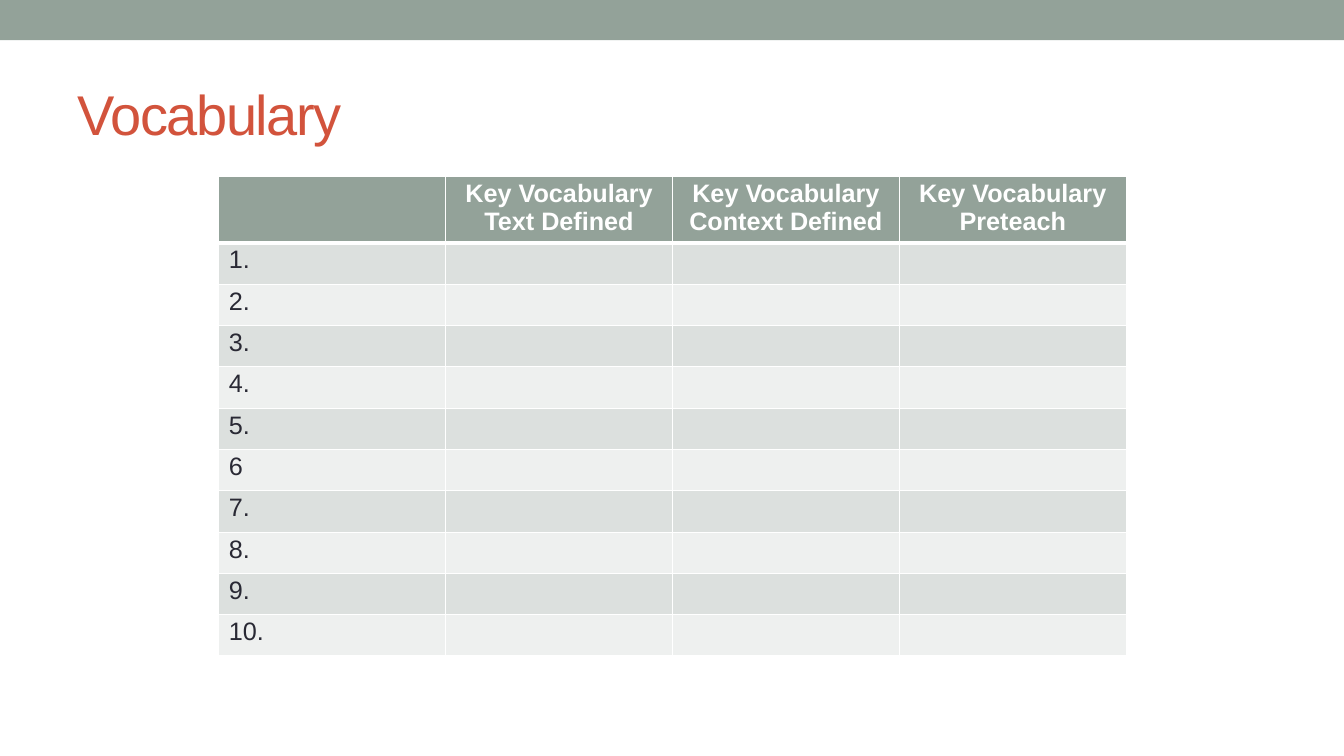
"""Builds a vocabulary slide with a blank word table."""
from lxml.etree import SubElement
from pptx import Presentation
from pptx.dml.color import RGBColor
from pptx.enum.shapes import MSO_SHAPE as SHAPE
from pptx.enum.text import MSO_ANCHOR as ANCHOR, PP_ALIGN as ALIGN
from pptx.oxml.ns import qn
from pptx.util import Inches, Pt


def rgb(value):
    return RGBColor.from_string(value)


def write(tf, text, size=18, color="292934", bold=False, align=ALIGN.LEFT, spacing=0):
    for i, line in enumerate(text.split("\n")):
        p = tf.paragraphs[0] if i == 0 else tf.add_paragraph()
        p.alignment = align
        r = p.add_run()
        r.text = line
        r.font.name = "Arial"
        r.font.size = Pt(size)
        r.font.bold = bold
        r.font.color.rgb = rgb(color)
        if spacing:
            r.font._element.set("spc", str(spacing * 100))


class Deck:
    sage, red, white = "93A299", "D2533C", "FFFFFF"
    bands = ("DCE0DE", "EEF0EF")

    def __init__(self):
        self.prs = Presentation()
        self.prs.slide_width, self.prs.slide_height = Inches(13.33), Inches(7.5)
        self.s = self.prs.slides.add_slide(self.prs.slide_layouts[6])

    def bar(self, x, y, w, h):
        sp = self.s.shapes.add_shape(SHAPE.RECTANGLE, Inches(x), Inches(y), Inches(w), Inches(h))
        sp.shadow.inherit = False
        sp.fill.solid()
        sp.fill.fore_color.rgb = rgb(self.sage)
        sp.line.fill.background()

    def title(self, text, x, y, w, h):
        sp = self.s.shapes.add_textbox(Inches(x), Inches(y), Inches(w), Inches(h))
        tf = sp.text_frame
        tf.word_wrap = True
        tf.vertical_anchor = ANCHOR.MIDDLE
        write(tf, text, size=40, color=self.red, spacing=-1)

    def cell(self, cell, text, header, fill):
        cell.margin_top = cell.margin_bottom = Inches(0.03)
        if text and header:
            write(cell.text_frame, text, color=self.white, bold=True, align=ALIGN.CENTER)
        elif text:
            write(cell.text_frame, text)
        tc_pr = cell._tc.get_or_add_tcPr()
        for side in ("L", "R", "T", "B"):
            width = 3 if header and side == "B" else 1
            ln = SubElement(tc_pr, qn(f"a:ln{side}"), w=str(Pt(width)))
            SubElement(SubElement(ln, qn("a:solidFill")), qn("a:srgbClr"), val=self.white)
        cell.fill.solid()
        cell.fill.fore_color.rgb = rgb(fill)

    def table(self, headings, labels, x, y, col_w, head_h, row_h):
        rows, cols = len(labels) + 1, len(headings)
        height = head_h + row_h * len(labels)
        frame = self.s.shapes.add_table(
            rows, cols, Inches(x), Inches(y), Inches(col_w * cols), Inches(height))
        tbl = frame.table
        for col in tbl.columns:
            col.width = Inches(col_w)
        grid = [headings] + [[label] + [""] * (cols - 1) for label in labels]
        for i, texts in enumerate(grid):
            tbl.rows[i].height = Inches(row_h if i else head_h)
            fill = self.bands[(i - 1) % 2] if i else self.sage
            for j, text in enumerate(texts):
                self.cell(tbl.cell(i, j), text, i == 0, fill)


def main():
    deck = Deck()
    deck.bar(0, 0, 13.33, 0.4)
    deck.title("Vocabulary", 0.67, 0.58, 12, 1.08)
    headings = ["", "Key Vocabulary\nText Defined", "Key Vocabulary\nContext Defined",
                "Key Vocabulary Preteach"]
    labels = ["6" if n == 6 else f"{n}." for n in range(1, 11)]
    deck.table(headings, labels, 2.17, 1.75, 2.25, 0.58, 0.41)
    deck.prs.save("out.pptx")


if __name__ == "__main__":
    main()
